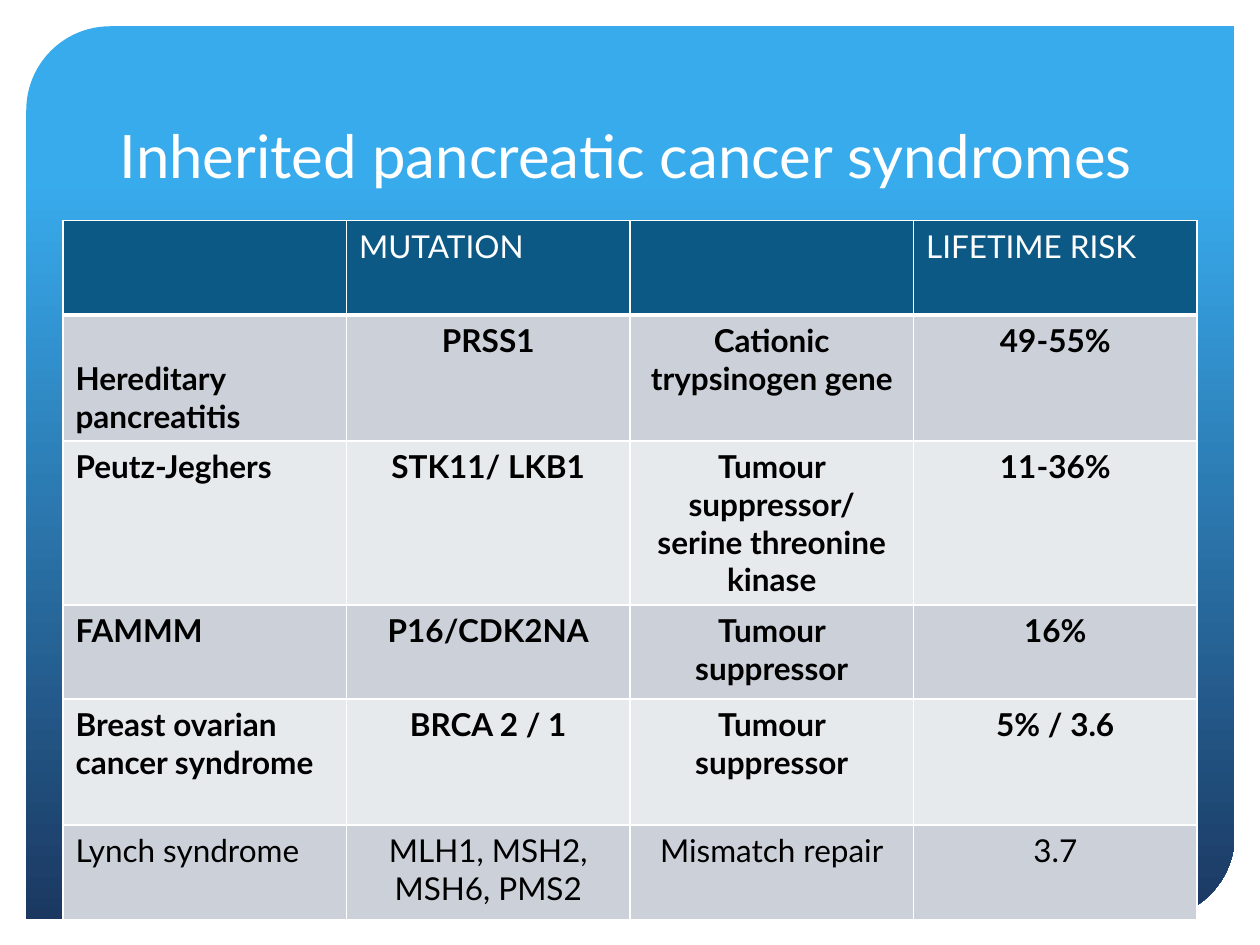
from lxml import etree
from pptx import Presentation
from pptx.dml.color import RGBColor
from pptx.enum.shapes import MSO_SHAPE
from pptx.enum.text import MSO_ANCHOR, MSO_AUTO_SIZE, PP_ALIGN
from pptx.oxml.ns import qn
from pptx.util import Cm, Pt

FONT = "Lato"
COLOURS = {
    "white": "FFFFFF",
    "text": "000000",
    "panel_top": "38ABED",
    "panel_bottom": "1B3861",
    "header": "0C5986",
    "band_dark": "CCD1D9",
    "band_light": "E7EAED",
}
HEADINGS = ("", "MUTATION", "", "LIFETIME RISK")
SYNDROMES = (
    ("Hereditary pancreatitis", "PRSS1", "Cationic trypsinogen gene", "49-55%"),
    ("Peutz-Jeghers", "STK11/ LKB1", "Tumour suppressor/ serine threonine kinase", "11-36%"),
    ("FAMMM", "P16/CDK2NA", "Tumour suppressor", "16%"),
    ("Breast ovarian cancer syndrome", "BRCA 2 / 1", "Tumour suppressor", "5% / 3.6"),
    ("Lynch syndrome", "MLH1, MSH2, MSH6, PMS2", "Mismatch repair", "3.7"),
)
ROW_HEIGHTS = (1.9, 2.54, 3.3, 1.9, 2.54, 1.9)


def colour(name):
    return RGBColor.from_string(COLOURS[name])


def add_text(paragraph, text, size, colour_name, bold=False):
    run = paragraph.add_run()
    run.text = text
    run.font.name = FONT
    run.font.size = Pt(size)
    run.font.bold = bold
    run.font.color.rgb = colour(colour_name)


def add_panel(slide, left, top, width, height):
    """Place the gradient panel behind everything else."""
    panel = slide.shapes.add_shape(MSO_SHAPE.ROUND_2_DIAG_RECTANGLE, left, top, width, height)
    panel.shadow.inherit = False
    panel.adjustments[0] = 0.094
    panel.adjustments[1] = 0
    panel.line.fill.background()
    panel.fill.gradient()
    panel.fill.gradient_angle = 270
    stops = ((0.17, "panel_top"), (1, "panel_bottom"))
    for stop, (position, name) in zip(panel.fill.gradient_stops, stops):
        stop.position = position
        stop.color.rgb = colour(name)
    slide.shapes._spTree.insert(2, panel._element)


def place_title(slide, left, top, width, height):
    title = slide.shapes.title
    title.left, title.top, title.width, title.height = left, top, width, height
    frame = title.text_frame
    frame.word_wrap = True
    frame.auto_size = MSO_AUTO_SIZE.NONE
    frame.vertical_anchor = MSO_ANCHOR.BOTTOM
    paragraph = frame.paragraphs[0]
    paragraph.alignment = PP_ALIGN.LEFT
    add_text(paragraph, "Inherited pancreatic cancer syndromes", 34.2, "white")


def set_borders(cell, bottom_width):
    """Draw white borders; they must precede the fill in the cell properties."""
    properties = cell._tc.get_or_add_tcPr()
    widths = (("a:lnL", 1), ("a:lnR", 1), ("a:lnT", 1), ("a:lnB", bottom_width))
    for index, (tag, width) in enumerate(widths):
        line = etree.Element(qn(tag), w=str(Pt(width)))
        fill = etree.SubElement(line, qn("a:solidFill"))
        etree.SubElement(fill, qn("a:srgbClr"), val=COLOURS["white"])
        properties.insert(index, line)


def add_syndrome_table(slide, left, top, width):
    rows = (HEADINGS,) + SYNDROMES
    height = Cm(sum(ROW_HEIGHTS))
    table = slide.shapes.add_table(len(rows), len(HEADINGS), left, top, width, height).table
    for column in table.columns:
        column.width = width // len(HEADINGS)
    for row_index, texts in enumerate(rows):
        table.rows[row_index].height = Cm(ROW_HEIGHTS[row_index])
        is_header = row_index == 0
        band = "header" if is_header else ("band_light", "band_dark")[row_index % 2]
        bold = 0 < row_index < len(rows) - 1
        for column_index, text in enumerate(texts):
            cell = table.cell(row_index, column_index)
            cell.fill.solid()
            cell.fill.fore_color.rgb = colour(band)
            set_borders(cell, 3 if is_header else 1)
            if not text:
                continue
            paragraph = cell.text_frame.paragraphs[0]
            centred = column_index > 0 and not is_header
            paragraph.alignment = PP_ALIGN.CENTER if centred else PP_ALIGN.LEFT
            add_text(paragraph, text, 18, "white" if is_header else "text", bold)
    # The first syndrome name starts one line lower
    table.cell(1, 0).margin_top = Cm(0.89)


def main():
    presentation = Presentation()
    presentation.slide_width, presentation.slide_height = Cm(25.4), Cm(19.05)
    slide = presentation.slides.add_slide(presentation.slide_layouts[5])
    add_panel(slide, Cm(0.53), Cm(0.53), Cm(24.36), Cm(18))
    place_title(slide, Cm(2.16), Cm(1.07), Cm(21.06), Cm(2.9))
    add_syndrome_table(slide, Cm(1.27), Cm(4.45), Cm(22.86))
    presentation.save("out.pptx")


if __name__ == "__main__":
    main()
